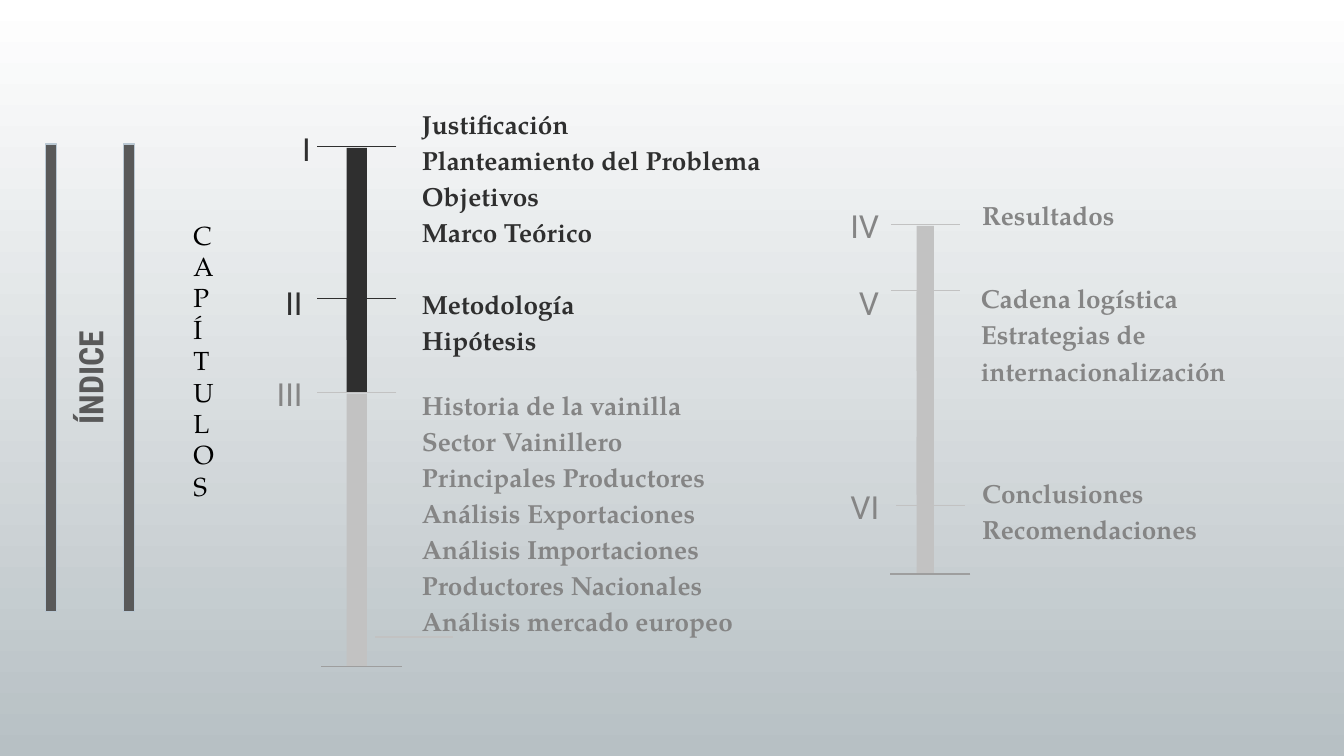
import pptx
import pptx.dml.color
import pptx.enum.shapes
import pptx.enum.text
import pptx.oxml.ns
import pptx.util
from dataclasses import dataclass
from lxml import etree

Inches = pptx.util.Inches
Pt = pptx.util.Pt
RGBColor = pptx.dml.color.RGBColor
ALIGN = pptx.enum.text.PP_ALIGN
ANCHOR = pptx.enum.text.MSO_ANCHOR

WHITE = RGBColor(0xFF, 0xFF, 0xFF)
MIST = RGBColor(0xB7, 0xC0, 0xC4)
BLACK = RGBColor(0, 0, 0)
DARK = RGBColor(0x2F, 0x2F, 0x2F)
SLATE = RGBColor(0x59, 0x59, 0x59)
GRAY = RGBColor(0x85, 0x85, 0x85)
SILVER = RGBColor(0xC2, 0xC2, 0xC2)
END_GRAY = RGBColor(0x9E, 0x9E, 0x9E)
EDGE_BLUE = RGBColor(0xBA, 0xC8, 0xD3)

SERIF = "TeX Gyre Pagella"
SANS = "Roboto"
CONDENSED = "Roboto Condensed"


@dataclass
class Column:
    """Horizontal layout shared by the chapters of one timeline."""
    text_left: float
    text_width: float
    numeral_left: float
    numeral_width: float
    bar_left: float
    bar_width: float
    tick_left: float
    tick_right: float


LEFT = Column(3.04, 3.08, 1.5, 0.85, 2.58, 0.15, 2.36, 2.95)
RIGHT = Column(7.21, 2.59, 5.92, 0.72, 6.82, 0.13, 6.63, 7.14)


@dataclass
class Chapter:
    column: Column
    numeral: str
    numeral_top: float
    numeral_height: float
    text_top: float
    text_height: float
    bar_top: float
    bar_height: float
    tick: float
    topics: list
    active: bool = False
    numeral_shift: float = 0
    tick_shift: float = 0
    text_shift: float = 0
    text_width: float = 0


CHAPTERS = [
    Chapter(LEFT, "II", 1.97, 0.37, 2.01, 0.29, 2.22, 0.7, 2.22,
            ["Metodología", "Hipótesis"], active=True),
    Chapter(LEFT, "III", 2.65, 1.01, 2.76, 0.81, 2.93, 2.03, 2.92,
            ["Historia de la vainilla", "Sector Vainillero",
             "Principales Productores", "Análisis Exportaciones",
             "Análisis Importaciones", "Productores Nacionales",
             "Análisis mercado europeo"]),
    Chapter(LEFT, "I", 0.82, 0.74, 0.67, 0.6, 1.1, 1.43, 1.09,
            ["Justificación", "Planteamiento del Problema", "Objetivos",
             "Marco Teórico"], active=True, numeral_shift=0.06),
    Chapter(RIGHT, "IV", 1.4, 0.57, 1.35, 0.45, 1.68, 1.08, 1.67,
            ["Resultados"]),
    Chapter(RIGHT, "VI", 3.49, 0.53, 3.42, 0.42, 3.25, 1.02, 3.76,
            ["Conclusiones", "Recomendaciones"], tick_shift=0.04),
    Chapter(RIGHT, "V", 1.97, 0.79, 1.97, 0.63, 2.17, 1.51, 2.16,
            ["Cadena logística", "Estrategias de internacionalización"],
            text_shift=-0.01, text_width=2.33),
]


def write_lines(frame, lines, font, size, color, bold=False,
                align=ALIGN.LEFT, spacing=1.0, anchor=ANCHOR.TOP):
    frame.word_wrap = True
    frame.auto_size = pptx.enum.text.MSO_AUTO_SIZE.NONE
    frame.vertical_anchor = anchor
    frame.margin_left = frame.margin_right = Inches(0.1)
    frame.margin_top = frame.margin_bottom = Inches(0.1)
    for index, line in enumerate(lines):
        para = frame.paragraphs[0] if index == 0 else frame.add_paragraph()
        para.alignment = align
        para.line_spacing = spacing
        para.space_before = Pt(0)
        span = para.add_run()
        span.text = line
        span.font.name = font
        span.font.size = Pt(size)
        span.font.bold = bold
        span.font.color.rgb = color


def add_text(page, left, top, width, height, lines, font, size, color, **style):
    box = page.shapes.add_textbox(Inches(left), Inches(top),
                                  Inches(width), Inches(height))
    write_lines(box.text_frame, lines, font, size, color, **style)


def add_bar(page, left, top, width, height, color, edge=None):
    bar = page.shapes.add_shape(pptx.enum.shapes.MSO_SHAPE.RECTANGLE,
                                Inches(left), Inches(top),
                                Inches(width), Inches(height))
    bar.shadow.inherit = False
    bar.fill.solid()
    bar.fill.fore_color.rgb = color
    if edge is None:
        bar.line.fill.background()
    else:
        bar.line.color.rgb = edge
        bar.line.width = Pt(0.75)
    return bar


def add_tick(page, left, right, height, color):
    """Draw a horizontal line at the given height."""
    tick = page.shapes.add_connector(pptx.enum.shapes.MSO_CONNECTOR.STRAIGHT,
                                     Inches(right), Inches(height),
                                     Inches(left), Inches(height))
    tick.line.color.rgb = color
    tick.line.width = Pt(0.75)
    properties = tick.element.find(pptx.oxml.ns.qn("p:spPr"))
    etree.SubElement(properties, pptx.oxml.ns.qn("a:effectLst"))


def add_chapter(page, chapter):
    column = chapter.column
    text_color = DARK if chapter.active else GRAY
    bar_color = DARK if chapter.active else SILVER
    add_text(page, column.text_left + chapter.text_shift, chapter.text_top,
             chapter.text_width or column.text_width, chapter.text_height,
             chapter.topics, SERIF, 14, text_color, bold=True, spacing=1.15)
    add_text(page, column.numeral_left + chapter.numeral_shift,
             chapter.numeral_top, column.numeral_width, chapter.numeral_height,
             [chapter.numeral], SANS, 17, text_color,
             align=ALIGN.RIGHT, spacing=1.15)
    add_bar(page, column.bar_left, chapter.bar_top,
            column.bar_width, chapter.bar_height, bar_color)
    add_tick(page, column.tick_left + chapter.tick_shift,
             column.tick_right + chapter.tick_shift, chapter.tick, bar_color)


def set_background(page):
    fill = page.background.fill
    fill.gradient()
    fill.gradient_angle = 270
    for stop, color in zip(fill.gradient_stops, (WHITE, MIST)):
        stop.color.rgb = color


def add_heading(page):
    """Place the vertical title between its two rails."""
    title = page.shapes.title
    title.left, title.top = Inches(-2.5), Inches(2.41)
    title.width, title.height = Inches(6.04), Inches(0.8)
    title.rotation = 270
    write_lines(title.text_frame, ["ÍNDICE"], CONDENSED, 18, SLATE,
                bold=True, align=ALIGN.CENTER, anchor=ANCHOR.BOTTOM)
    for left in (-0.78, -1.36):
        rail = add_bar(page, left, 2.77, 3.48, 0.08, SLATE, EDGE_BLUE)
        rail.rotation = 270


def main():
    deck = pptx.Presentation()
    deck.slide_width = Inches(10)
    deck.slide_height = deck.slide_width * 9 // 16
    page = deck.slides.add_slide(deck.slide_layouts[5])
    set_background(page)
    add_heading(page)
    add_text(page, 1.34, 1.53, 0.33, 2.32, list("CAPÍTULOS"), SERIF, 14, BLACK)
    for chapter in CHAPTERS:
        add_chapter(page, chapter)
    add_tick(page, 2.79, 3.37, 4.74, SILVER)
    add_tick(page, 2.39, 2.99, 4.96, END_GRAY)
    add_tick(page, 6.62, 7.22, 4.27, END_GRAY)
    deck.save("out.pptx")


if __name__ == "__main__":
    main()
